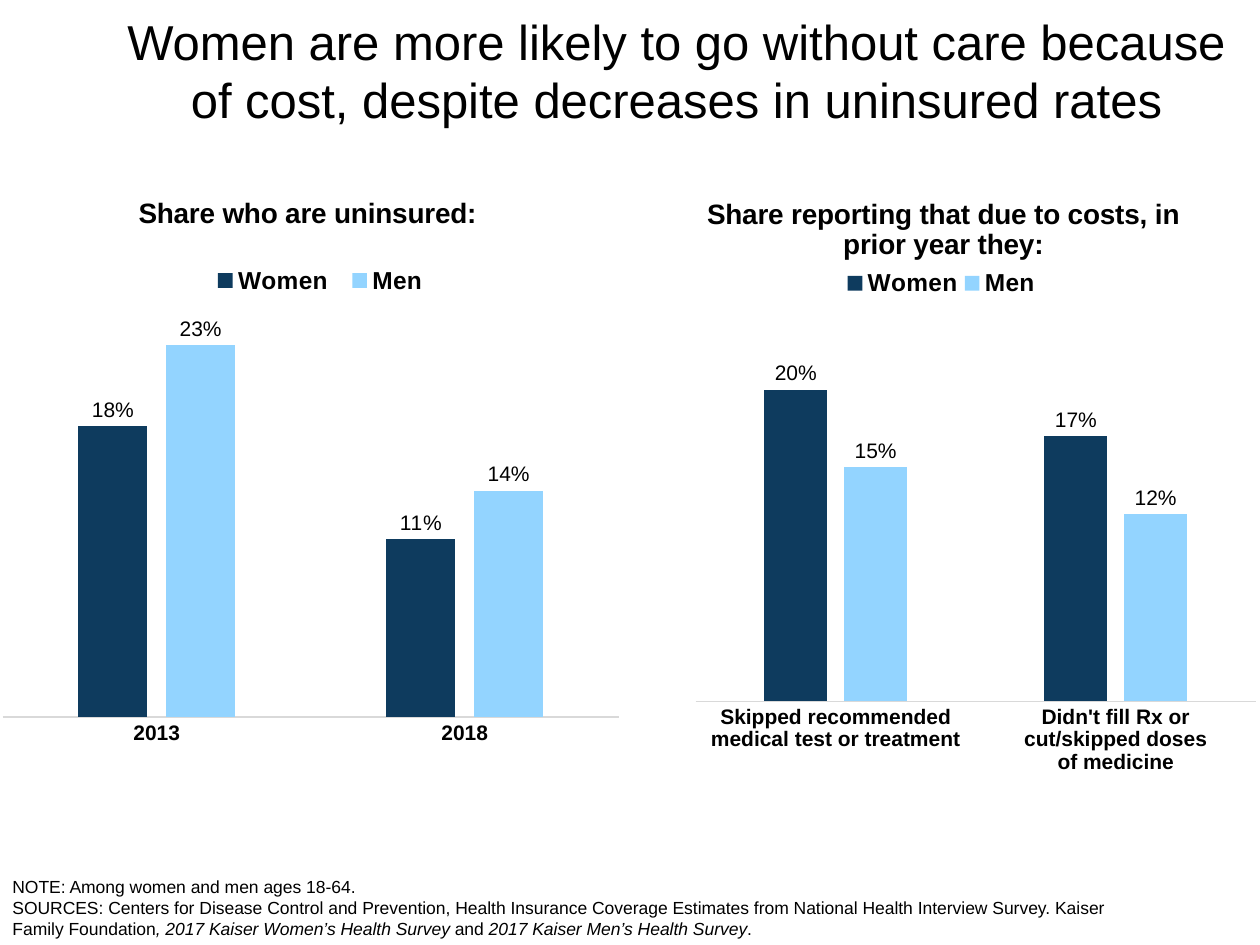
"""Build a slide comparing uninsured rates and cost barriers for women and men."""
from lxml.etree import SubElement
from pptx import Presentation
from pptx.chart.data import CategoryChartData
from pptx.dml.color import RGBColor
from pptx.enum.chart import XL_CHART_TYPE, XL_LABEL_POSITION, XL_LEGEND_POSITION, XL_TICK_MARK
from pptx.enum.text import MSO_ANCHOR, PP_ALIGN
from pptx.oxml.ns import qn
from pptx.util import Pt

COLORS = {"text": "000000", "Women": "0E3B5E", "Men": "93D4FF", "axis": "D9D9D9"}


def style(font, size, bold=False, italic=False):
    font.name = "Arial"
    font.size = Pt(size)
    font.bold = bold
    font.italic = italic
    font.color.rgb = RGBColor.from_string(COLORS["text"])


def place(part, before, **position):
    for existing in part.findall(qn("c:layout")):
        part.remove(existing)
    layout = SubElement(part, qn("c:layout"))
    manual = SubElement(layout, qn("c:manualLayout"))
    if before == "c:barChart":
        SubElement(manual, qn("c:layoutTarget")).set("val", "inner")
    for side in ("x", "y"):
        SubElement(manual, qn(f"c:{side}Mode")).set("val", "edge")
    for key, value in position.items():
        SubElement(manual, qn(f"c:{key}")).set("val", str(value))
    part.find(qn(before)).addprevious(layout)


deck = Presentation()
deck.slide_width, deck.slide_height = Pt(720), Pt(540)
slide = deck.slides.add_slide(deck.slide_layouts[6])

headline = slide.shapes.add_textbox(Pt(60), Pt(4), Pt(653), Pt(72)).text_frame
headline.word_wrap = True
headline.vertical_anchor = MSO_ANCHOR.MIDDLE
headline.paragraphs[0].alignment = PP_ALIGN.CENTER
headline_run = headline.paragraphs[0].add_run()
headline_run.text = (
    "Women are more likely to go without care because of cost, "
    "despite decreases in uninsured rates"
)
style(headline_run.font, 28)

panels = [
    {
        "question": "Share who are uninsured:",
        "box": (-2, 93, 356, 396),
        "groups": ["2013", "2018"],
        "shares": {"Women": (0.18, 0.11), "Men": (0.23, 0.14)},
        "question_at": {"x": 0.22, "y": 0.04},
        "legend_at": {"x": 0.33, "y": 0.14, "w": 0.38, "h": 0.06},
        "plot_at": {"x": 0.01, "y": 0.1, "w": 0.99, "h": 0.7},
    },
    {
        "question": "Share reporting that due to costs, in prior year they:",
        "box": (358, 93, 360, 405),
        "groups": [
            "Skipped recommended medical test or treatment",
            "Didn't fill Rx or cut/skipped doses of medicine",
        ],
        "shares": {"Women": (0.2, 0.17), "Men": (0.15, 0.12)},
        "question_at": {"x": 0.12, "y": 0.04},
        "legend_at": {"x": 0.34, "y": 0.14, "w": 0.32, "h": 0.06},
        "plot_at": {"x": 0.11, "y": 0.1, "w": 0.89, "h": 0.66},
    },
]

for panel in panels:
    data = CategoryChartData(number_format="0%")
    data.categories = panel["groups"]
    for gender, shares in panel["shares"].items():
        data.add_series(gender, shares)
    chart = slide.shapes.add_chart(
        XL_CHART_TYPE.COLUMN_CLUSTERED, *map(Pt, panel["box"]), data
    ).chart
    style(chart.font, 10)

    question = chart.chart_title.text_frame.paragraphs[0].add_run()
    question.text = panel["question"]
    style(question.font, 16, bold=True)
    chart.chart_title.include_in_layout = False
    place(chart._chartSpace.chart.find(qn("c:title")), "c:overlay", **panel["question_at"])

    chart.has_legend = True
    chart.legend.position = XL_LEGEND_POSITION.TOP
    chart.legend.include_in_layout = False
    style(chart.legend.font, 14, bold=True)
    place(chart._chartSpace.chart.find(qn("c:legend")), "c:overlay", **panel["legend_at"])
    place(chart._chartSpace.chart.plotArea, "c:barChart", **panel["plot_at"])

    chart.value_axis.minimum_scale = 0
    chart.value_axis.maximum_scale = 0.3
    chart.value_axis.has_major_gridlines = False
    chart.value_axis.visible = False
    chart.category_axis.major_tick_mark = XL_TICK_MARK.NONE
    chart.category_axis.format.line.color.rgb = RGBColor.from_string(COLORS["axis"])
    chart.category_axis.format.line.width = Pt(0.75)
    style(chart.category_axis.tick_labels.font, 12, bold=True)

    columns = chart.plots[0]
    columns.gap_width = 219
    columns.overlap = -27
    columns.vary_by_categories = False
    for gender in columns.series:
        gender.format.fill.solid()
        gender.format.fill.fore_color.rgb = RGBColor.from_string(COLORS[gender.name])
        labels = gender.data_labels
        labels.show_value = True
        labels.position = XL_LABEL_POSITION.OUTSIDE_END
        labels.number_format = "0%"
        labels.number_format_is_linked = False
        style(labels.font, 12)

footnotes = slide.shapes.add_textbox(Pt(0), Pt(497), Pt(660), Pt(43)).text_frame
footnotes.word_wrap = True
footnotes.vertical_anchor = MSO_ANCHOR.BOTTOM
note = footnotes.paragraphs[0]
sources = footnotes.add_paragraph()
for line, words, italic in [
    (note, "NOTE: Among women and men ages 18-64.", False),
    (
        sources,
        "SOURCES: Centers for Disease Control and Prevention, Health Insurance Coverage "
        "Estimates from National Health Interview Survey. Kaiser Family Foundation",
        False,
    ),
    (sources, ", 2017 Kaiser Women’s Health Survey ", True),
    (sources, "and", False),
    (sources, " 2017 Kaiser Men’s Health Survey", True),
    (sources, ".", False),
]:
    run = line.add_run()
    run.text = words
    style(run.font, 10, italic=italic)

deck.save("out.pptx")
